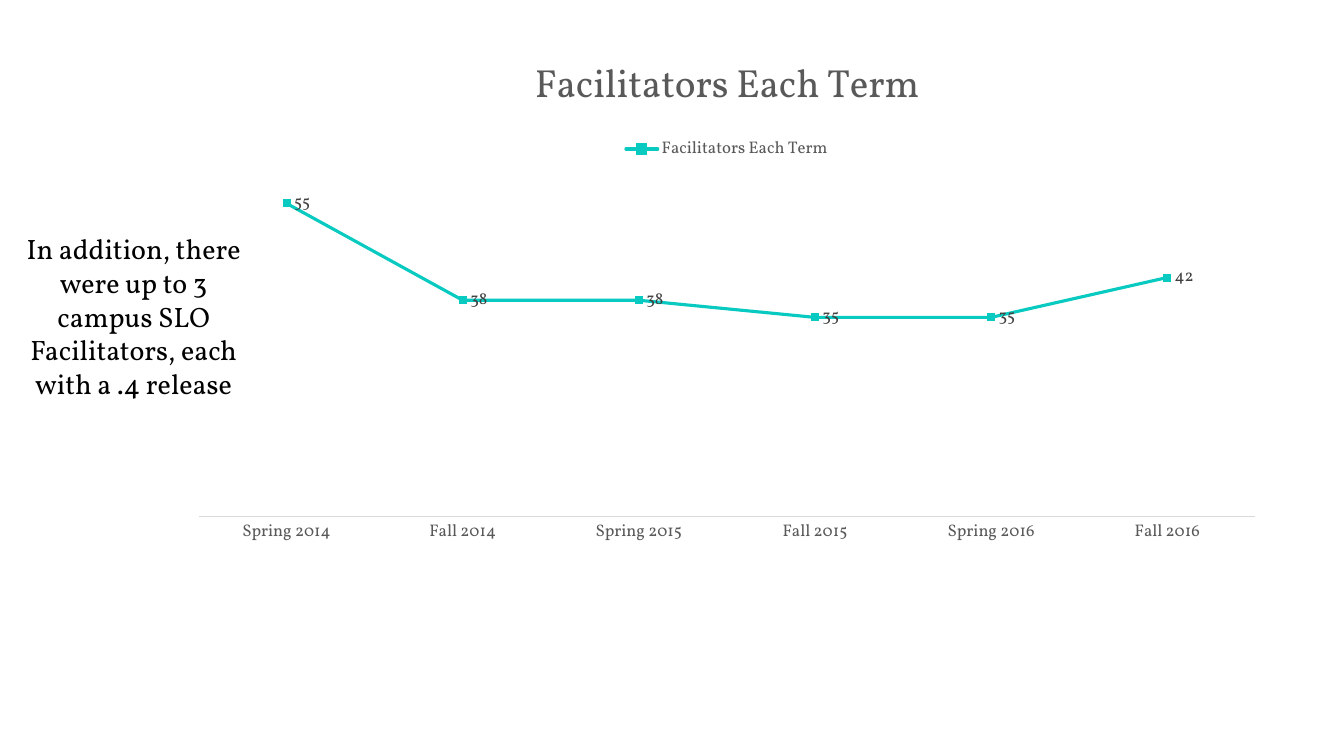
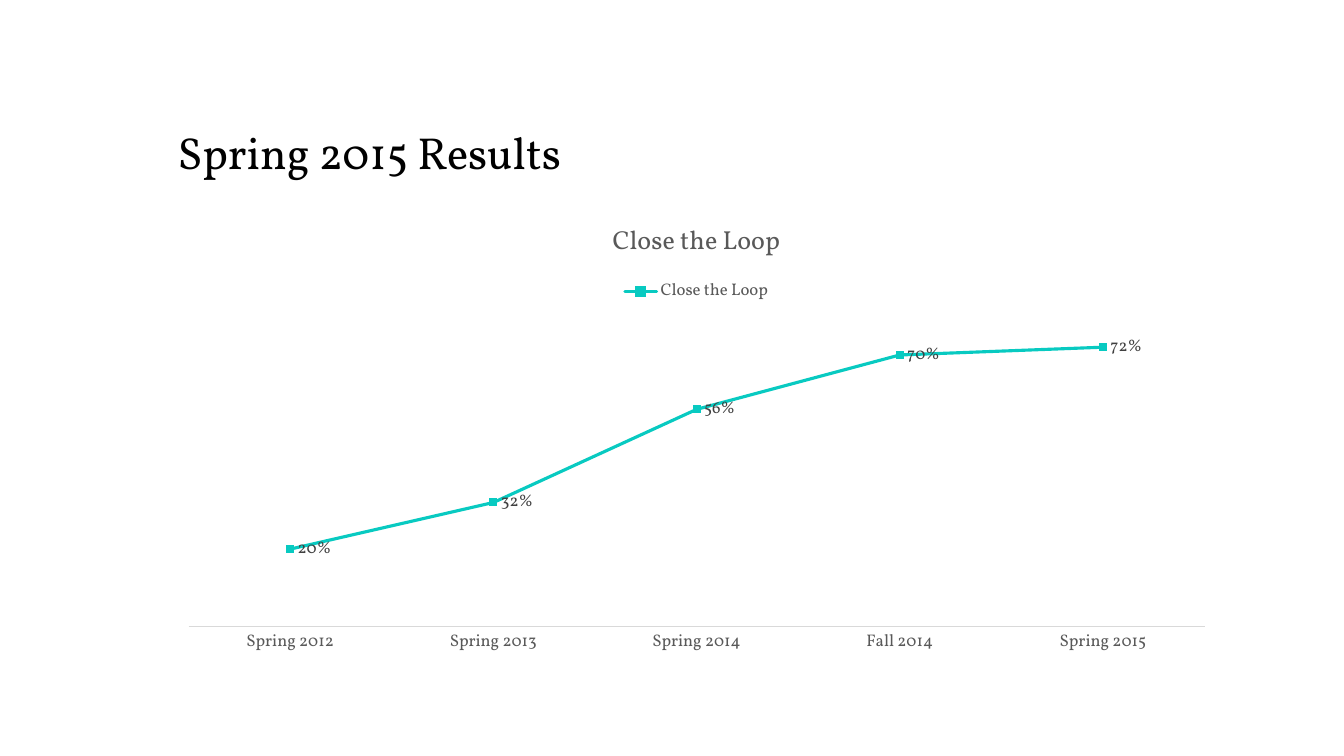
from pptx import Presentation
from pptx.chart.data import CategoryChartData
from pptx.dml.color import RGBColor
from pptx.enum.chart import XL_CHART_TYPE, XL_LABEL_POSITION, XL_LEGEND_POSITION, XL_TICK_MARK
from pptx.enum.text import MSO_ANCHOR, MSO_AUTO_SIZE, PP_ALIGN
from pptx.util import Cm, Pt

LINE_CHART = XL_CHART_TYPE.LINE
LABEL_RIGHT = XL_LABEL_POSITION.RIGHT
LEGEND_TOP = XL_LEGEND_POSITION.TOP
NO_TICK = XL_TICK_MARK.NONE
BOTTOM = MSO_ANCHOR.BOTTOM
FIT_SHAPE = MSO_AUTO_SIZE.SHAPE_TO_FIT_TEXT
LEFT, CENTER = PP_ALIGN.LEFT, PP_ALIGN.CENTER

BLACK = RGBColor(0x00, 0x00, 0x00)
DARK_GRAY = RGBColor(0x40, 0x40, 0x40)
GRAY = RGBColor(0x59, 0x59, 0x59)
LIGHT_GRAY = RGBColor(0xD9, 0xD9, 0xD9)
TEAL = RGBColor(0x08, 0xCA, 0xC1)

TITLE_ONLY, BLANK = 5, 6


class Pages:
    """Shared style and the current slide."""

    face = "Vollkorn"

    def __init__(self):
        self.deck = Presentation()
        self.deck.slide_width, self.deck.slide_height = Cm(33.87), Cm(19.05)
        self.page = None

    def add_page(self, layout):
        self.page = self.deck.slides.add_slide(self.deck.slide_layouts[layout])

    def style(self, font, size, color):
        font.name, font.size, font.color.rgb = self.face, Pt(size), color
        font.bold = False

    def title(self, text, left, top, width, height):
        box = self.page.shapes.title
        box.left, box.top, box.width, box.height = left, top, width, height
        frame = box.text_frame
        frame.text = text
        frame.vertical_anchor = BOTTOM
        para = frame.paragraphs[0]
        para.alignment, para.line_spacing = LEFT, 0.9
        self.style(para.font, 32, BLACK)

    def note(self, text, left, top, width, height):
        frame = self.page.shapes.add_textbox(left, top, width, height).text_frame
        frame.word_wrap = True
        frame.auto_size = FIT_SHAPE
        frame.text = text
        para = frame.paragraphs[0]
        para.alignment = CENTER
        self.style(para.font, 20, BLACK)

    def line_chart(self, name, points, left, top, width, height,
                   title_size, top_value, number_format="General"):
        data = CategoryChartData(number_format=number_format)
        data.categories = [term for term, value in points]
        data.add_series(name, [value for term, value in points])
        chart = self.page.shapes.add_chart(
            LINE_CHART, left, top, width, height, data).chart
        self.style(chart.font, 10, BLACK)

        # Title and legend
        chart.has_title = True
        chart.chart_title.include_in_layout = False
        frame = chart.chart_title.text_frame
        frame.text = name
        self.style(frame.paragraphs[0].font, title_size, GRAY)
        chart.has_legend = True
        chart.legend.position = LEGEND_TOP
        chart.legend.include_in_layout = False
        self.style(chart.legend.font, 12, GRAY)

        # Axes
        terms, values = chart.category_axis, chart.value_axis
        terms.major_tick_mark = terms.minor_tick_mark = NO_TICK
        terms.format.line.color.rgb = LIGHT_GRAY
        terms.format.line.width = Pt(0.75)
        self.style(terms.tick_labels.font, 12, GRAY)
        values.minimum_scale, values.maximum_scale = 0, top_value
        values.has_major_gridlines = False
        values.visible = False

        # Line and value labels
        series = chart.plots[0].series[0]
        series.smooth = False
        series.marker.style = None
        series.format.line.color.rgb = TEAL
        series.format.line.width = Pt(2.25)
        series._element.xpath("c:spPr/a:ln")[0].set("cap", "rnd")
        labels = series.data_labels
        labels.show_value = True
        labels.position = LABEL_RIGHT
        labels.number_format = number_format
        labels.number_format_is_linked = False
        self.style(labels.font, 12, DARK_GRAY)


def main():
    pages = Pages()

    # Facilitators each term
    pages.add_page(BLANK)
    pages.line_chart(
        "Facilitators Each Term",
        [("Spring 2014", 55), ("Fall 2014", 38), ("Spring 2015", 38),
         ("Fall 2015", 35), ("Spring 2016", 35), ("Fall 2016", 42)],
        Cm(4.45), Cm(0.84), Cm(27.74), Cm(13.13), title_size=28, top_value=60)
    pages.note("In addition, there were up to 3 campus SLO Facilitators, "
               "each with a .4 release",
               Cm(0.41), Cm(5.72), Cm(5.92), Cm(4.52))

    # Spring 2015 results
    pages.add_page(TITLE_ONLY)
    left, width = Cm(4.22), Cm(26.67)
    pages.title("Spring 2015 Results", left, Cm(1.47), width, Cm(3.18))
    pages.line_chart(
        "Close the Loop",
        [("Spring 2012", 0.2), ("Spring 2013", 0.32), ("Spring 2014", 0.56),
         ("Fall 2014", 0.7), ("Spring 2015", 0.72)],
        left, Cm(5.08), width, Cm(11.63),
        title_size=18.6, top_value=0.8, number_format="0%")

    pages.deck.save("out.pptx")


if __name__ == "__main__":
    main()
